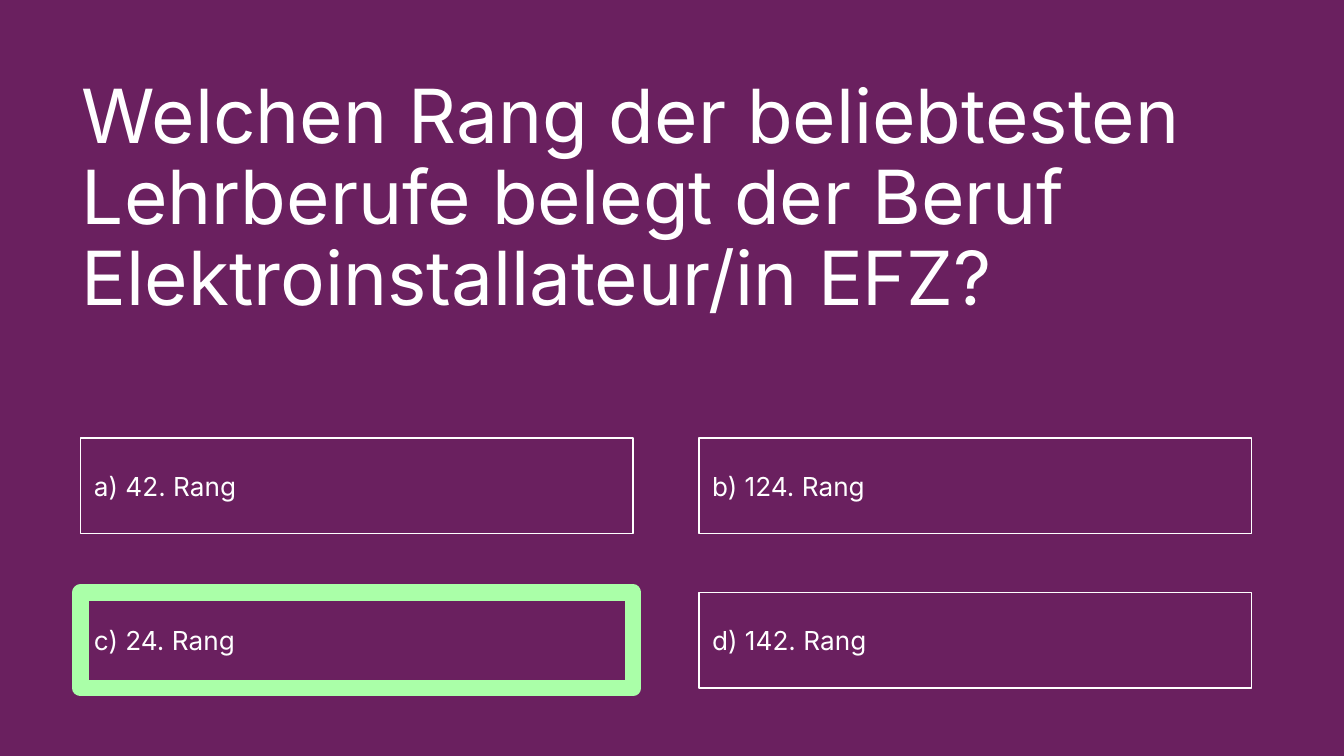
"""Build a quiz slide with four answers and the correct one highlighted."""
from pptx import Presentation
from pptx.dml.color import RGBColor
from pptx.enum.shapes import MSO_SHAPE
from pptx.enum.text import MSO_ANCHOR, MSO_AUTO_SIZE, PP_ALIGN
from pptx.util import Pt

QUESTION = "Welchen Rang der beliebtesten Lehrberufe belegt der Beruf Elektroinstallateur/in EFZ?"
ANSWERS = ["a) 42. Rang", "b) 124. Rang", "c) 24. Rang", "d) 142. Rang"]
CORRECT = 2

PURPLE = RGBColor(0x6A, 0x20, 0x5F)
WHITE = RGBColor(0xFF, 0xFF, 0xFF)
GREEN = RGBColor(0xAA, 0xFF, 0xA8)
FONT = "Inter"
RECTANGLE = MSO_SHAPE.RECTANGLE
TOP, MIDDLE = MSO_ANCHOR.TOP, MSO_ANCHOR.MIDDLE
LEFT = PP_ALIGN.LEFT
GROW, FIXED = MSO_AUTO_SIZE.SHAPE_TO_FIT_TEXT, MSO_AUTO_SIZE.NONE

COLUMNS = 2
GRID_LEFT, GRID_TOP = 43.2, 234.7
BOX_WIDTH, BOX_HEIGHT = 295.9, 51.1
COLUMN_STEP, ROW_STEP = 331.2, 82.8


def write(shape, text, size, anchor=MIDDLE, margin=7.2, spacing=1.0, fit=FIXED):
    frame = shape.text_frame
    frame.word_wrap = True
    frame.auto_size = fit
    frame.vertical_anchor = anchor
    frame.margin_left = frame.margin_right = Pt(margin)
    frame.margin_top = frame.margin_bottom = Pt(margin)
    para = frame.paragraphs[0]
    para.alignment = LEFT
    para.line_spacing = spacing
    span = para.add_run()
    span.text = text
    span.font.name = FONT
    span.font.size = Pt(size)
    span.font.color.rgb = WHITE


def add_answer_box(page, index, color, weight):
    row, column = divmod(index, COLUMNS)
    box = page.shapes.add_shape(
        RECTANGLE,
        Pt(GRID_LEFT + column * COLUMN_STEP),
        Pt(GRID_TOP + row * ROW_STEP),
        Pt(BOX_WIDTH),
        Pt(BOX_HEIGHT),
    )
    box.shadow.inherit = False
    box.fill.background()
    box.line.color.rgb = color
    box.line.width = Pt(weight)
    return box


def main():
    deck = Presentation()
    deck.slide_width, deck.slide_height = Pt(720), Pt(405)
    page = deck.slides.add_slide(deck.slide_layouts[5])
    page.background.fill.solid()
    page.background.fill.fore_color.rgb = PURPLE

    title = page.shapes.title
    title.left, title.top = Pt(43.9), Pt(42.5)
    title.width, title.height = Pt(610.6), Pt(131)
    write(title, QUESTION, 40, anchor=TOP, margin=0, spacing=0.9, fit=GROW)

    for index, answer in enumerate(ANSWERS):
        write(add_answer_box(page, index, WHITE, 0.75), answer, 14)
    add_answer_box(page, CORRECT, GREEN, 9)

    deck.save("out.pptx")


if __name__ == "__main__":
    main()
